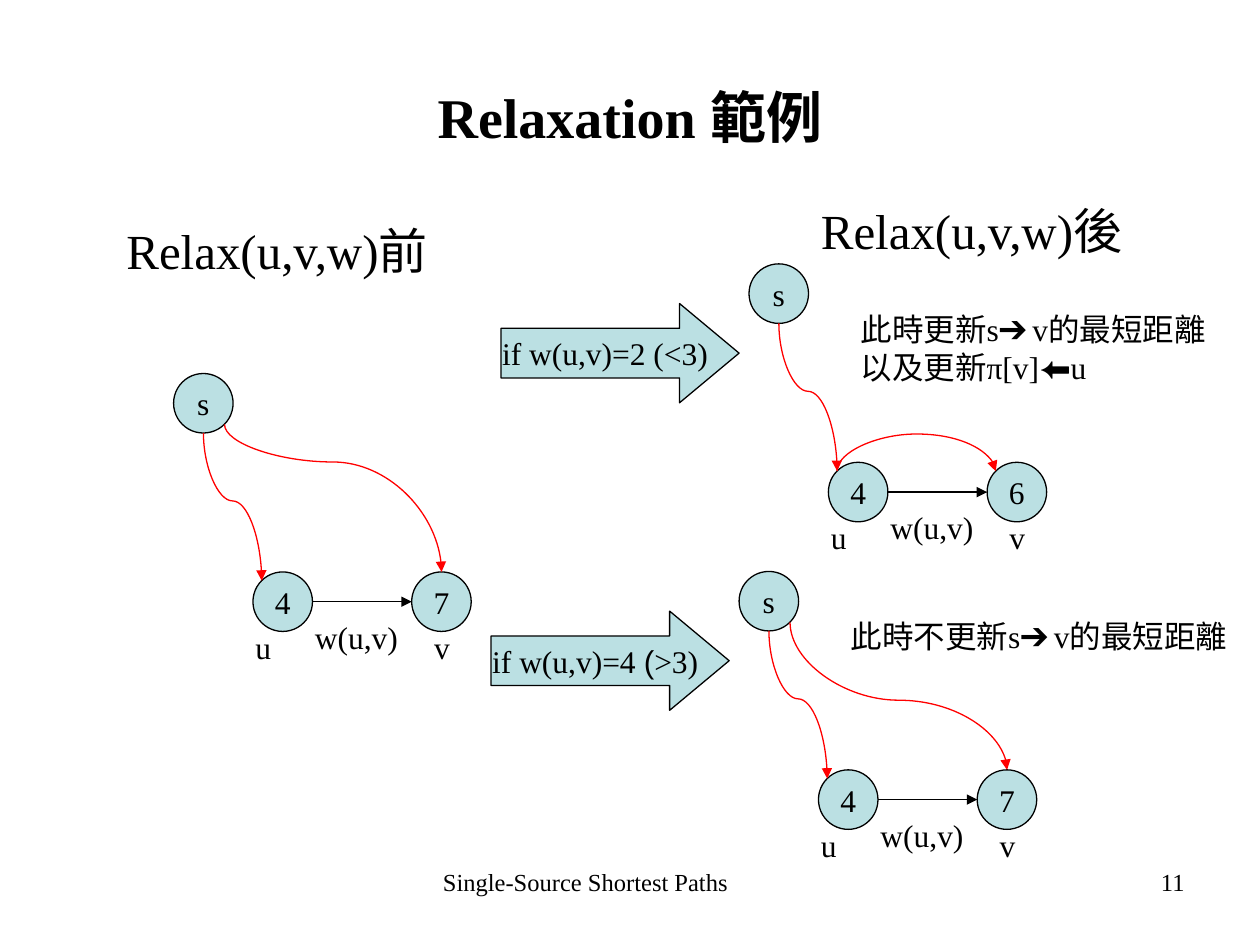
from lxml import etree
from pptx import Presentation
from pptx.dml.color import RGBColor
from pptx.enum.shapes import MSO_CONNECTOR, MSO_SHAPE
from pptx.enum.text import MSO_ANCHOR, MSO_AUTO_SIZE, PP_ALIGN
from pptx.oxml.ns import qn
from pptx.util import Cm, Pt

COLORS = {"ink": "000000", "node": "BBE0E3", "path": "FF0000"}
SERIF, SANS = "Times New Roman", "Arial"
NODE = 1.2  # node diameter in cm

prs = Presentation()
prs.slide_width, prs.slide_height = Cm(25.4), Cm(19.05)
slide = prs.slides.add_slide(prs.slide_layouts[6])
shapes = slide.shapes


def write(frame, pieces, size=18, align=PP_ALIGN.LEFT, bold=False):
    """Fill a frame with (text, font) pieces; a vertical tab breaks the line."""
    paragraph = frame.paragraphs[0]
    paragraph.text = pieces[0][0]
    for words, _ in pieces[1:]:
        paragraph.add_run().text = words
    paragraph.alignment = align
    fonts = [font for words, font in pieces for _ in words.split("\v")]
    for run, font in zip(paragraph.runs, fonts):
        run.font.name, run.font.size, run.font.bold = font, Pt(size), bold
        run.font.color.rgb = RGBColor.from_string(COLORS["ink"])


def arrow(kind, start, end, color, dip=None):
    """Draw an arrow; a curve first runs vertically by dip cm, then turns."""
    (x1, y1), (x2, y2) = start, end
    edge = shapes.add_connector(kind, Cm(x1), Cm(y1), Cm(x2), Cm(y2))
    edge.line.color.rgb = RGBColor.from_string(COLORS[color])
    edge.line.width = Pt(0.75)
    properties = edge.element.spPr
    etree.SubElement(properties.find(qn("a:ln")), qn("a:tailEnd"), type="triangle")
    etree.SubElement(properties, qn("a:effectLst"))
    if dip is not None:
        # Swap the box sides about its centre, then turn it upright
        across, down = x2 - x1, max(y2 - y1, 0.01)
        edge.left = Cm((x1 + x2 - down) / 2)
        edge.top = Cm((y1 + y2 - across) / 2)
        edge.width, edge.height = Cm(down), Cm(across)
        frame = properties.find(qn("a:xfrm"))
        frame.set("rot", str(270 * 60000))
        frame.set("flipH", "1")
        guides = properties.find(qn("a:prstGeom")).find(qn("a:avLst"))
        etree.SubElement(guides, qn("a:gd"), name="adj1",
                         fmla=f"val {round(dip / down * 100000)}")


# Graphs: position of s, distance of v, and the second red path
corner = NODE * 0.146  # inset of a circle's diagonal points
s_bottom, s_lower_right = (0.6, NODE), (NODE - corner, NODE - corner)
u_upper_left, v_upper_left = (1.6 + corner, 4 + corner), (4.8 + corner, 4 + corner)
v_top = (5.4, 4)
graphs = [
    (3.5, 7.53, "7", (s_lower_right, v_top, 0.76)),
    (15.1, 5.32, "6", (u_upper_left, v_upper_left, -0.74)),
    (14.9, 11.52, "7", (s_lower_right, v_top, 1.57)),
]
texts = []
for x, y, v_distance, second_path in graphs:
    for label, dx, dy in [("s", 0, 0), ("4", 1.6, 4), (v_distance, 4.8, 4)]:
        node = shapes.add_shape(MSO_SHAPE.OVAL, Cm(x + dx), Cm(y + dy), Cm(NODE), Cm(NODE))
        node.shadow.inherit = False
        node.fill.solid()
        node.fill.fore_color.rgb = RGBColor.from_string(COLORS["node"])
        node.line.color.rgb = RGBColor.from_string(COLORS["ink"])
        node.line.width = Pt(0.75)
        node.text_frame.word_wrap = False
        node.text_frame.vertical_anchor = MSO_ANCHOR.MIDDLE
        write(node.text_frame, [(label, SERIF)], align=PP_ALIGN.CENTER)
    for (x1, y1), (x2, y2), dip in [(s_bottom, u_upper_left, 1.37), second_path]:
        arrow(MSO_CONNECTOR.CURVE, (x + x1, y + y1), (x + x2, y + y2), "path", dip)
    arrow(MSO_CONNECTOR.STRAIGHT, (x + 2.8, y + 4.6), (x + 4.8, y + 4.6), "ink")
    texts += [
        (x + 2.6, y + 4.8, 2.4, 1.02, 18, [("w(u,v)", SERIF)]),
        (x + 1.4, y + 5, 1, 1.02, 18, [("u", SERIF)]),
        (x + 5, y + 5, 1, 1.02, 18, [("v", SERIF)]),
    ]

# Conditions, each pointing at the s node of its result
conditions = [
    [("if w(u,v)=2 (<3)", SERIF)],
    [("if w(u,v)=4 ", SERIF), ("(", SANS), (">3)", SERIF)],
]
for (x, y, *_), condition in zip(graphs[1:], conditions):
    block = shapes.add_shape(MSO_SHAPE.RIGHT_ARROW, Cm(x - 5), Cm(y + 0.8), Cm(4.8), Cm(2))
    block.adjustments[0], block.adjustments[1] = 0.5, 0.6
    block.shadow.inherit = False
    block.fill.solid()
    block.fill.fore_color.rgb = RGBColor.from_string(COLORS["node"])
    block.line.color.rgb = RGBColor.from_string(COLORS["ink"])
    block.line.width = Pt(0.75)
    block.text_frame.word_wrap = False
    block.text_frame.vertical_anchor = MSO_ANCHOR.MIDDLE
    write(block.text_frame, condition, align=PP_ALIGN.CENTER)

# Headings, explanations and graph labels
texts += [
    (2.3, 4.32, 6.8, 1.45, 28, [("Relax(u,v,w)", SERIF), ("前", SANS)]),
    (16.3, 3.92, 7, 1.45, 28, [("Relax(u,v,w)", SERIF), ("後", SANS)]),
    (17.1, 6.12, 7.8, 1.78, 18, [("此時更新s➔v的最短距離\v以及更新π[v]⬅u", SERIF)]),
    (16.9, 12.32, 8.2, 1.02, 18, [("此時不更新s➔v的最短距離", SERIF)]),
]
for x, y, width, height, size, pieces in texts:
    caption = shapes.add_textbox(Cm(x), Cm(y), Cm(width), Cm(height))
    caption.text_frame.word_wrap = True
    caption.text_frame.auto_size = MSO_AUTO_SIZE.SHAPE_TO_FIT_TEXT
    write(caption.text_frame, pieces, size)

# Title, footer and page number
for x, y, width, height, words, size, align, anchor, bold in [
    (1.27, 0.76, 22.86, 3.18, "Relaxation 範例", 32, PP_ALIGN.CENTER, MSO_ANCHOR.MIDDLE, True),
    (8.68, 17.35, 8.04, 1.32, "Single-Source Shortest Paths", 14,
     PP_ALIGN.LEFT, MSO_ANCHOR.TOP, False),
    (18.2, 17.35, 5.93, 1.32, "11", 14, PP_ALIGN.RIGHT, MSO_ANCHOR.TOP, False),
]:
    line = shapes.add_textbox(Cm(x), Cm(y), Cm(width), Cm(height))
    line.text_frame.word_wrap = True
    line.text_frame.vertical_anchor = anchor
    write(line.text_frame, [(words, SERIF)], size, align, bold)

prs.save("out.pptx")
